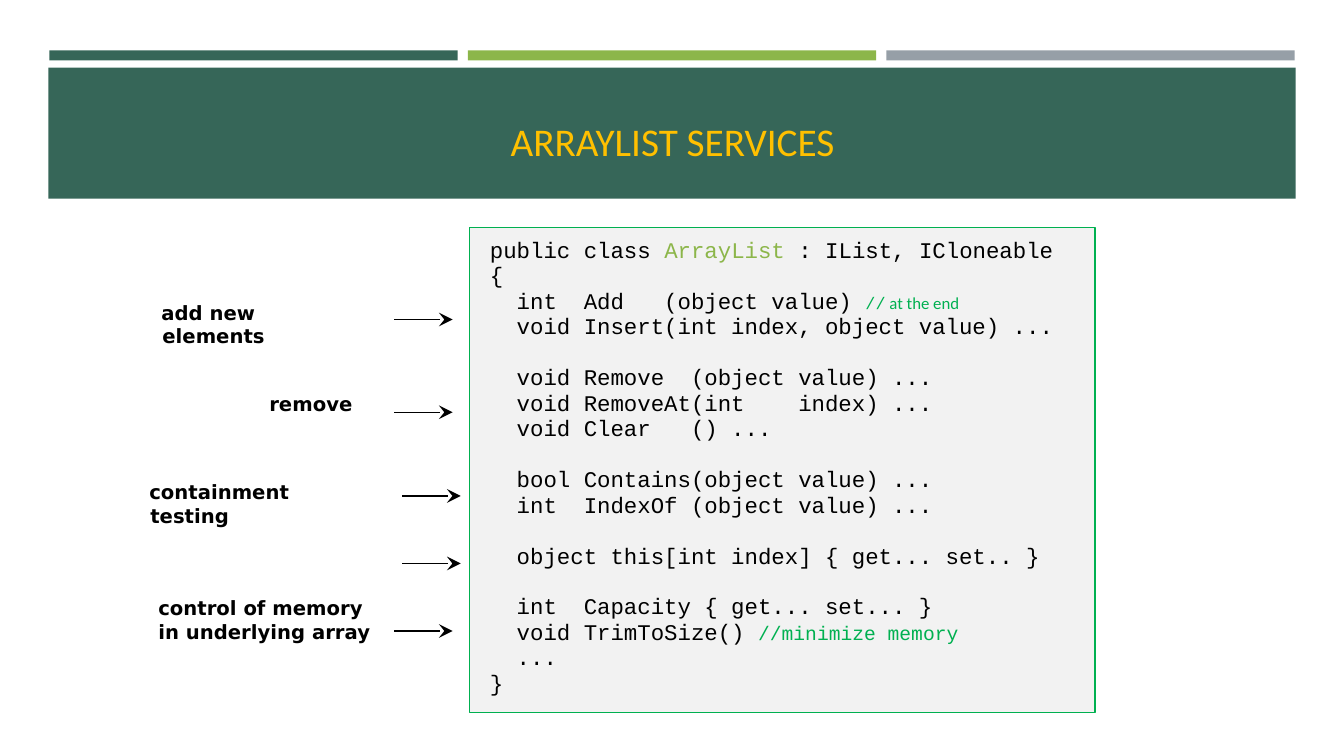
from lxml import etree
from pptx import Presentation
from pptx.dml.color import RGBColor
from pptx.enum.shapes import MSO_CONNECTOR, MSO_SHAPE
from pptx.enum.text import MSO_ANCHOR, PP_ALIGN
from pptx.oxml.ns import qn
from pptx.util import Inches, Pt

RECTANGLE, ROUNDED = MSO_SHAPE.RECTANGLE, MSO_SHAPE.ROUNDED_RECTANGLE
STRAIGHT = MSO_CONNECTOR.STRAIGHT
TOP, BOTTOM = MSO_ANCHOR.TOP, MSO_ANCHOR.BOTTOM
LEFT, CENTER = PP_ALIGN.LEFT, PP_ALIGN.CENTER

COLORS = {"teal": "366658", "lime": "8CB64A", "steel": "969FA7", "gold": "FFC000",
          "panel": "F2F2F2", "green": "00B050", "black": "000000"}
STYLES = {
    "title": ("Calibri", 28, "gold", False),
    "code": ("Courier New", 16, "black", False),
    "type": ("Courier New", 16, "lime", False),
    "slashes": ("Courier New", 12, "green", False),
    "remark": ("Calibri", 12, "green", False),
    "comment": ("Courier New", 14, "green", False),
    "label": ("DejaVu Sans", 14, "black", True),
}

TITLE = "ARRAYLIST SERVICES"
STRIPES = ["teal", "lime", "steel"]
CODE_GROUPS = [
    [
        [("public class ", "code"), ("ArrayList", "type"), (" : IList, ICloneable", "code")],
        [("{", "code")],
        [("  int  Add   (object value) ", "code"), ("//", "slashes"), (" at the end", "remark")],
        [("  void Insert(int index, object value) ...", "code")],
    ],
    [
        [("  void Remove  (object value) ...", "code")],
        [("  void RemoveAt(int    index) ...", "code")],
        [("  void Clear   () ...", "code")],
    ],
    [
        [("  bool Contains(object value) ...", "code")],
        [("  int  IndexOf (object value) ...", "code")],
    ],
    [[("  object this[int index] { get... set.. }", "code")]],
    [
        [("  int  Capacity { get... set... }", "code")],
        [("  void TrimToSize() ", "code"), ("//minimize memory", "comment")],
        [("  ...", "code")],
        [("}", "code")],
    ],
]
LABELS = [
    (["add new elements"], (1.49, 2.92, 2.23, 0.36), 0.8),
    (["remove"], (2.56, 3.83, 1.05, 0.36), 0),
    (["containment testing"], (1.37, 4.7, 2.45, 0.36), 0.8),
    (["control of memory", "in underlying array"], (1.45, 5.84, 2.36, 0.62), 0),
]
ARROWS = [(3.91, 3.17), (3.91, 4.09), (3.99, 4.92), (3.99, 5.59), (3.91, 6.26)]
ARROW_LENGTH = 0.58
CODE_LINE_HEIGHT = Pt(18.1)


def color(name):
    return RGBColor.from_string(COLORS[name])


def add_box(slide, kind, box, fill=None, line=None):
    shape = slide.shapes.add_shape(kind, *[Inches(value) for value in box])
    shape.shadow.inherit = False
    if fill:
        shape.fill.solid()
        shape.fill.fore_color.rgb = color(fill)
    else:
        shape.fill.background()
    if line:
        shape.line.color.rgb = color(line)
        shape.line.width = Pt(1)
    else:
        shape.line.fill.background()
    return shape


def set_frame(shape, margins, anchor=TOP, wrap=True):
    frame = shape.text_frame
    frame.word_wrap = wrap
    frame.vertical_anchor = anchor
    frame.margin_left, frame.margin_top, frame.margin_right, frame.margin_bottom = [
        Inches(margin) for margin in margins]
    return frame


def write_line(frame, index, runs, alignment=LEFT, hanging=True):
    paragraph = frame.paragraphs[0] if index == 0 else frame.add_paragraph()
    paragraph.alignment = alignment
    if hanging:
        properties = paragraph._p.get_or_add_pPr()
        properties.set("marL", str(Inches(0.01)))
        properties.set("indent", str(-Inches(0.01)))
    for text, style in runs:
        name, size, tint, bold = STYLES[style]
        run = paragraph.add_run()
        run.text = text
        run.font.name = name
        run.font.size = Pt(size)
        run.font.bold = bold
        run.font.color.rgb = color(tint)
    return paragraph


def add_header(slide):
    for index, fill in enumerate(STRIPES):
        add_box(slide, RECTANGLE, (0.49 + 4.15 * index, 0.5, 4.05, 0.1), fill)
    add_box(slide, RECTANGLE, (0.48, 0.67, 12.37, 1.3), "teal")
    title = slide.shapes.add_textbox(Inches(0.64), Inches(0.77), Inches(12.06), Inches(0.91))
    frame = set_frame(title, (0.1, 0.05, 0.1, 0.05), BOTTOM)
    write_line(frame, 0, [(TITLE, "title")], CENTER, False)


def add_code(slide):
    panel = add_box(slide, RECTANGLE, (4.66, 2.26, 6.2, 4.81), "panel", "green")
    frame = set_frame(panel, (0.2, 0.1, 0.2, 0.1), wrap=False)
    index = 0
    for group in CODE_GROUPS:
        for position, runs in enumerate(group):
            paragraph = write_line(frame, index, runs)
            paragraph.line_spacing = 0.95
            if index and position == 0:
                paragraph.space_before = CODE_LINE_HEIGHT
            index += 1


def add_label(slide, lines, box, right_margin):
    label = add_box(slide, ROUNDED, box)
    label.adjustments[0] = 0.125
    frame = set_frame(label, (0.1, 0.05, right_margin, 0.05))
    for index, text in enumerate(lines):
        write_line(frame, index, [(text, "label")])


def add_arrow(slide, left, top):
    arrow = slide.shapes.add_connector(
        STRAIGHT, Inches(left), Inches(top), Inches(left + ARROW_LENGTH), Inches(top))
    arrow.line.color.rgb = color("black")
    arrow.line.width = Pt(1)
    etree.SubElement(arrow.line._get_or_add_ln(), qn("a:tailEnd"), type="stealth", w="lg", len="lg")
    etree.SubElement(arrow._element.spPr, qn("a:effectLst"))


def main():
    """Build the ArrayList services slide."""
    presentation = Presentation()
    presentation.slide_width = Inches(13.33)
    presentation.slide_height = Inches(7.5)
    slide = presentation.slides.add_slide(presentation.slide_layouts[6])
    add_header(slide)
    add_code(slide)
    for lines, box, right_margin in LABELS:
        add_label(slide, lines, box, right_margin)
    for left, top in ARROWS:
        add_arrow(slide, left, top)
    presentation.save("out.pptx")


if __name__ == "__main__":
    main()
